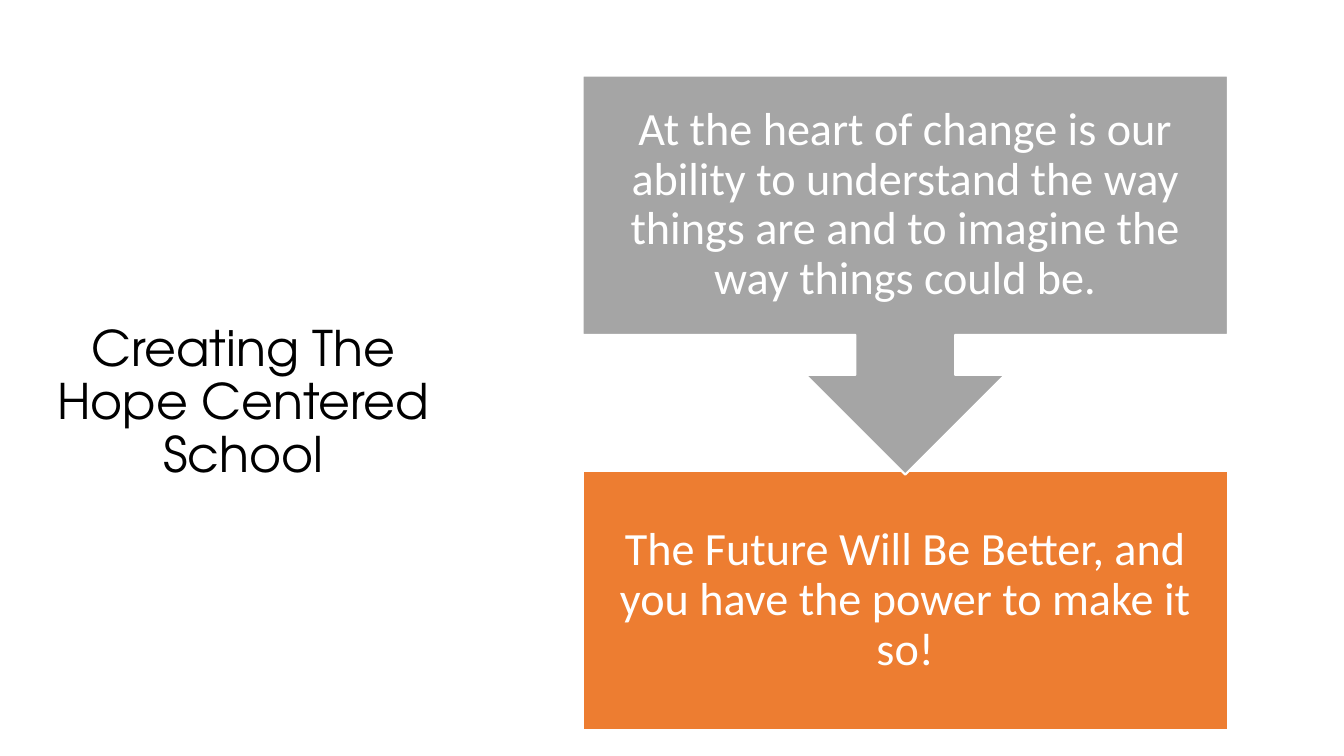
from dataclasses import dataclass

import pptx
import pptx.dml.color
import pptx.enum.shapes
import pptx.enum.text
import pptx.slide
import pptx.text.text
import pptx.util

Pt = pptx.util.Pt
RGBColor = pptx.dml.color.RGBColor
MSO_SHAPE = pptx.enum.shapes.MSO_SHAPE

BLACK = RGBColor(0x00, 0x00, 0x00)
WHITE = RGBColor(0xFF, 0xFF, 0xFF)
ORANGE = RGBColor(0xED, 0x7D, 0x31)
GRAY = RGBColor(0xA5, 0xA5, 0xA5)

STEP_LEFT, STEP_WIDTH = 416.2, 460.8
TEXT_HEIGHT = 185
INSET = 18.5


@dataclass
class Step:
    text: str
    preset: MSO_SHAPE
    top: float
    height: float
    rotation: float
    color: RGBColor


# The later step comes first so that the arrow tip lies above it
STEPS = [
    Step("The Future Will Be Better, and you have the power to make it so!",
         MSO_SHAPE.RECTANGLE, 336.2, TEXT_HEIGHT, 0, ORANGE),
    Step("At the heart of change is our ability to understand the way things "
         "are and to imagine the way things could be.",
         MSO_SHAPE.UP_ARROW_CALLOUT, 54, 285, 180, GRAY),
]


def format_text(tf: pptx.text.text.TextFrame, text: str, font: str,
                size: float, color: RGBColor) -> None:
    tf.text = text
    tf.word_wrap = True
    tf.auto_size = pptx.enum.text.MSO_AUTO_SIZE.NONE
    tf.vertical_anchor = pptx.enum.text.MSO_ANCHOR.MIDDLE
    p = tf.paragraphs[0]
    p.alignment = pptx.enum.text.PP_ALIGN.CENTER
    p.line_spacing = 0.9
    r = p.runs[0]
    r.font.name = font
    r.font.size = Pt(size)
    r.font.color.rgb = color


def add_step(s: pptx.slide.Slide, step: Step) -> None:
    left, top, width = Pt(STEP_LEFT), Pt(step.top), Pt(STEP_WIDTH)
    sp = s.shapes.add_shape(step.preset, left, top, width, Pt(step.height))
    sp.rotation = step.rotation
    sp.shadow.inherit = False
    sp.fill.solid()
    sp.fill.fore_color.rgb = step.color
    sp.line.color.rgb = WHITE
    sp.line.width = Pt(1.5)

    # The label is separate so that it stays upright on the turned callout
    tf = s.shapes.add_textbox(left, top, width, Pt(TEXT_HEIGHT)).text_frame
    tf.margin_left = tf.margin_right = Pt(INSET)
    tf.margin_top = tf.margin_bottom = Pt(INSET)
    format_text(tf, step.text, "Calibri", 33, WHITE)


def main() -> None:
    prs = pptx.Presentation()
    prs.slide_width, prs.slide_height = Pt(960), Pt(540)
    s = prs.slides.add_slide(prs.slide_layouts[5])

    # Title
    title = s.shapes.title
    title.left, title.top = Pt(31.7), Pt(54)
    title.width, title.height = Pt(284.4), Pt(468)
    format_text(title.text_frame, "Creating The Hope Centered School",
                "TeX Gyre Adventor", 35, BLACK)

    # Process steps
    for step in STEPS:
        add_step(s, step)

    prs.save("out.pptx")


if __name__ == "__main__":
    main()
